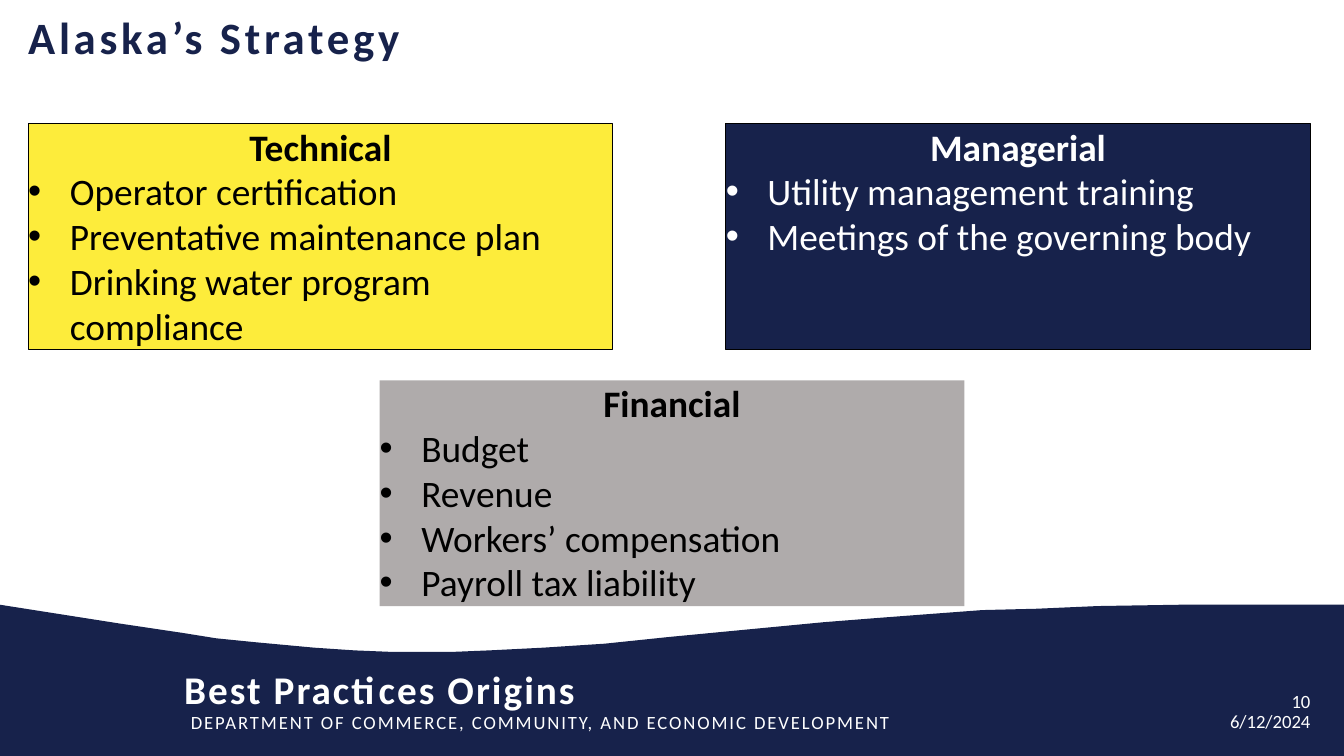
from lxml import etree
from pptx import Presentation
from pptx.dml.color import RGBColor
from pptx.enum.shapes import MSO_SHAPE
from pptx.enum.text import MSO_ANCHOR, MSO_AUTO_SIZE, PP_ALIGN
from pptx.oxml.ns import qn
from pptx.util import Inches, Pt

NAVY = RGBColor(0x17, 0x22, 0x4B)
YELLOW = RGBColor(0xFD, 0xEC, 0x3B)
GRAY = RGBColor(0xAF, 0xAB, 0xAB)
BLACK = RGBColor(0, 0, 0)
WHITE = RGBColor(0xFF, 0xFF, 0xFF)
LEFT, CENTER, RIGHT = PP_ALIGN.LEFT, PP_ALIGN.CENTER, PP_ALIGN.RIGHT
RECT = MSO_SHAPE.RECTANGLE
TOP = MSO_ANCHOR.TOP
NO_FIT = MSO_AUTO_SIZE.NONE

WIDTH = 10
HEIGHT = WIDTH * 9 / 16
MARGIN = 0.21
RIGHT_EDGE = 9.75
CARD_W, CARD_H = 4.35, 1.68
ROW_TOPS = (0.92, 2.83)
COLUMN_LEFTS = (MARGIN, (WIDTH - CARD_W) / 2, RIGHT_EDGE - CARD_W)
INDENT = 0.31

TITLE = "Alaska’s Strategy"
CARDS = [
    {"heading": "Managerial", "column": 2, "row": 0, "placeholder": 1,
     "fill": NAVY, "color": WHITE, "outlined": True,
     "items": ["Utility management training", "Meetings of the governing body"]},
    {"heading": "Financial", "column": 1, "row": 1, "placeholder": 2,
     "fill": GRAY, "color": BLACK, "outlined": False,
     "items": ["Budget", "Revenue", "Workers’ compensation", "Payroll tax liability"]},
    {"heading": "Technical", "column": 0, "row": 0, "placeholder": None,
     "fill": YELLOW, "color": BLACK, "outlined": True,
     "items": ["Operator certification", "Preventative maintenance plan",
               "Drinking water program compliance"]},
]
FOOTER = [
    ("DEPARTMENT OF COMMERCE, COMMUNITY, AND ECONOMIC DEVELOPMENT",
     (1.42, 5.29, 6.2, 0.17), LEFT, {"size": Pt(10)}, 1.05),
    ("Best Practices Origins",
     (1.37, 4.95, 6.25, 0.35), LEFT, {"size": Pt(21), "bold": True}, 1.1),
    ("10", (7.45, 5.13, 2.3, 0.17), RIGHT, {"size": Pt(10)}, 0),
    ("6/12/2024", (8.91, 5.28, 0.84, 0.17), RIGHT, {"size": Pt(10)}, 0),
]
WAVE = [
    (0, 4.5), (0.89, 4.64), (1.36, 4.71), (1.61, 4.75), (1.91, 4.78), (2.34, 4.82),
    (2.64, 4.84), (2.89, 4.85), (3.14, 4.85), (3.39, 4.85), (3.64, 4.84), (4.04, 4.82),
    (4.5, 4.79), (4.98, 4.74), (6.13, 4.63), (6.51, 4.6), (6.91, 4.57), (7.31, 4.54),
    (7.71, 4.53), (8.17, 4.51), (8.78, 4.5), (WIDTH, 4.5), (WIDTH, HEIGHT), (0, HEIGHT),
]


def place(sp, left, top, width, height):
    sp.left, sp.top = Inches(left), Inches(top)
    sp.width, sp.height = Inches(width), Inches(height)


def prepare(tf):
    settings = {"margin_left": 0, "margin_right": 0, "margin_top": 0, "margin_bottom": 0,
                "word_wrap": True, "auto_size": NO_FIT, "vertical_anchor": TOP}
    for name, value in settings.items():
        setattr(tf, name, value)


def write(p, text, align, font, spacing=0, bullet=False):
    pPr = p._p.get_or_add_pPr()
    indent = Inches(INDENT) if bullet else 0
    pPr.set("marL", str(indent))
    pPr.set("indent", str(-indent))
    if bullet:
        etree.SubElement(pPr, qn("a:buFont")).set("typeface", "Arial")
        etree.SubElement(pPr, qn("a:buChar")).set("char", "•")
    else:
        etree.SubElement(pPr, qn("a:buNone"))
    p.alignment = align
    p.space_before = Pt(0)
    r = p.add_run()
    r.text = text
    color = font["color"]
    for name, value in {"name": "Calibri", "bold": False, **font}.items():
        if name != "color":
            setattr(r.font, name, value)
    r.font.color.rgb = color
    if spacing:
        r._r.get_or_add_rPr().set("spc", str(round(spacing * 100)))


def add_wave(s):
    points = [(Inches(x), Inches(y)) for x, y in WAVE]
    builder = s.shapes.build_freeform(*points[0])
    builder.add_line_segments(points[1:], close=True)
    sp = builder.convert_to_shape()
    sp.shadow.inherit = False
    sp.fill.solid()
    sp.fill.fore_color.rgb = NAVY
    sp.line.fill.background()


def add_card(s, card):
    if card["placeholder"]:
        sp = s.placeholders[card["placeholder"]]
    else:
        sp = s.shapes.add_shape(RECT, 0, 0, 0, 0)
        sp.shadow.inherit = False
    place(sp, COLUMN_LEFTS[card["column"]], ROW_TOPS[card["row"]], CARD_W, CARD_H)
    sp.fill.solid()
    sp.fill.fore_color.rgb = card["fill"]
    if card["outlined"]:
        sp.line.color.rgb = BLACK
        sp.line.width = Pt(0.75)
    else:
        sp.line.fill.background()
    tf = sp.text_frame
    prepare(tf)
    font = {"size": Pt(20), "color": card["color"]}
    write(tf.paragraphs[0], card["heading"], CENTER, {**font, "bold": True})
    for item in card["items"]:
        write(tf.add_paragraph(), item, LEFT, font, bullet=True)


def main():
    prs = Presentation()
    prs.slide_width, prs.slide_height = Inches(WIDTH), Inches(HEIGHT)
    s = prs.slides.add_slide(prs.slide_layouts[3])
    add_wave(s)

    title = s.shapes.title
    place(title, MARGIN, 0.07, 5.23, 0.4)
    prepare(title.text_frame)
    write(title.text_frame.paragraphs[0], TITLE, LEFT,
          {"size": Pt(24), "bold": True, "color": NAVY}, spacing=2)

    for card in CARDS:
        add_card(s, card)

    for text, box, align, font, spacing in FOOTER:
        tf = s.shapes.add_textbox(*(Inches(v) for v in box)).text_frame
        prepare(tf)
        write(tf.paragraphs[0], text, align, {**font, "color": WHITE}, spacing)

    prs.save("out.pptx")


if __name__ == "__main__":
    main()
